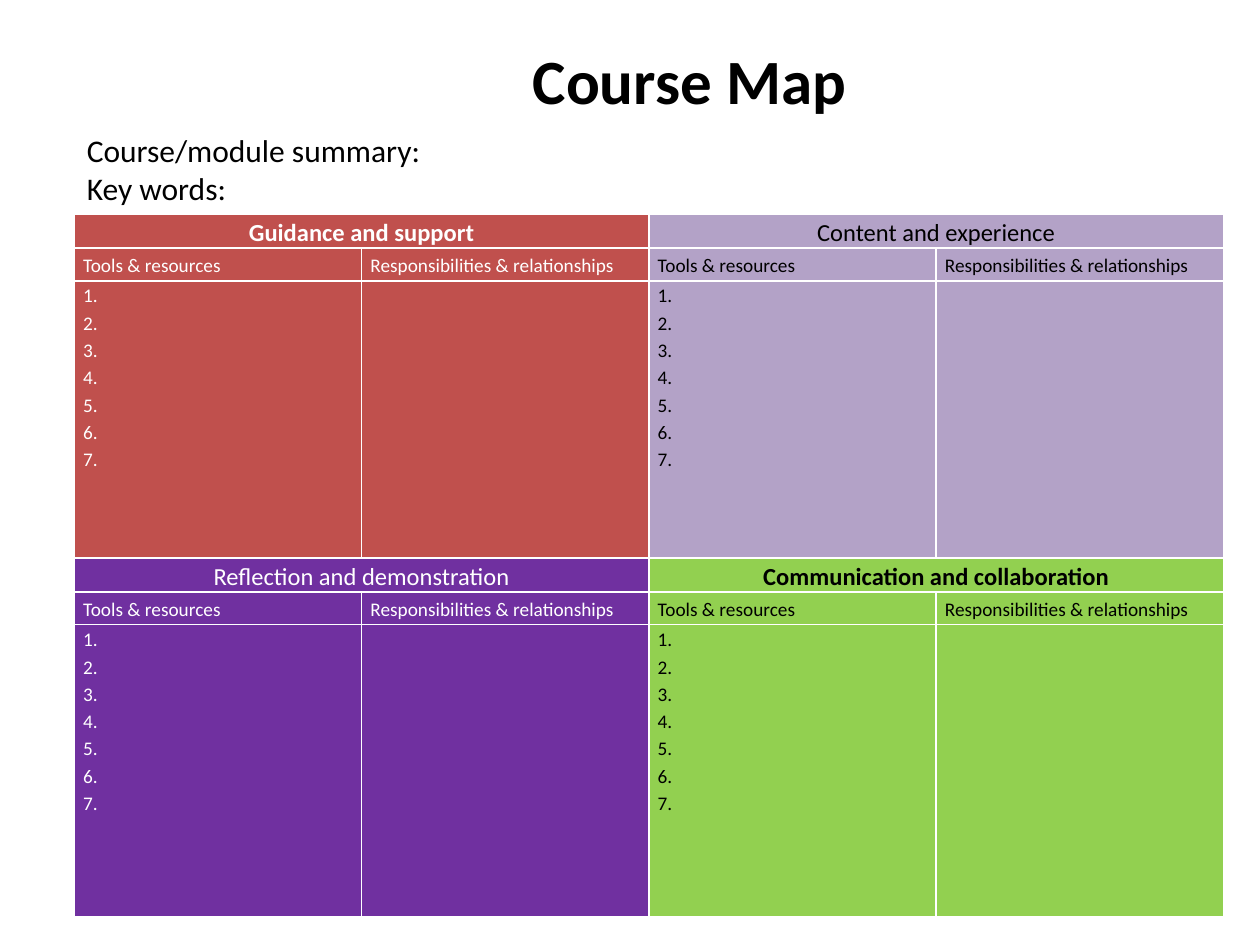
from lxml.etree import SubElement
from pptx import Presentation
from pptx.dml.color import RGBColor
from pptx.enum.text import MSO_ANCHOR, PP_ALIGN
from pptx.oxml.ns import qn
from pptx.util import Inches, Pt

BLACK = RGBColor(0x00, 0x00, 0x00)
WHITE = RGBColor(0xFF, 0xFF, 0xFF)
RED = RGBColor(0xC0, 0x50, 0x4D)
LILAC = RGBColor(0xB3, 0xA2, 0xC7)
PURPLE = RGBColor(0x70, 0x30, 0xA0)
GREEN = RGBColor(0x92, 0xD0, 0x50)

FONT = "Calibri"
LEFT, TOP, COLUMN_WIDTH = 0.59, 1.7, 2.28
ROW_HEIGHTS = [0.27, 0.26, 2.2, 0.26, 0.26, 2.32]
COLUMNS = 4
ROWS_PER_AREA, COLUMNS_PER_AREA = 3, 2
HEADINGS = ["Tools & resources", "Responsibilities & relationships"]
NUMBERS = [f"{number}." for number in range(1, 8)]
AREAS = [
    ("Guidance and support", RED, WHITE, True),
    ("Content and experience", LILAC, BLACK, False),
    ("Reflection and demonstration", PURPLE, WHITE, False),
    ("Communication and collaboration", GREEN, BLACK, True),
]


def write_lines(frame, lines, size, color=BLACK, bold=False, align=PP_ALIGN.LEFT, spacing=None):
    """Write each line as a paragraph of the text frame."""
    for index, line in enumerate(lines):
        para = frame.paragraphs[0] if index == 0 else frame.add_paragraph()
        para.alignment = align
        para.line_spacing = spacing
        span = para.add_run()
        span.text = line
        span.font.name = FONT
        span.font.size = Pt(size)
        span.font.bold = bold
        span.font.color.rgb = color


def add_text(page, lines, left, top, width, height, **style):
    """Add a wrapping text box."""
    box = page.shapes.add_textbox(Inches(left), Inches(top), Inches(width), Inches(height))
    box.text_frame.word_wrap = True
    write_lines(box.text_frame, lines, **style)


def style_cell(cell, fill):
    """Give a cell white borders, a plain fill and tight margins."""
    properties = cell._tc.get_or_add_tcPr()
    for side in ("lnL", "lnR", "lnT", "lnB"):
        border = SubElement(properties, qn(f"a:{side}"), w=str(Pt(1)))
        SubElement(SubElement(border, qn("a:solidFill")), qn("a:srgbClr"), val=str(WHITE))
    cell.fill.solid()
    cell.fill.fore_color.rgb = fill
    cell.margin_left = cell.margin_right = Inches(0.07)
    cell.margin_top = cell.margin_bottom = 0


def write_cell(cell, lines, anchor=MSO_ANCHOR.MIDDLE, **style):
    """Write anchored lines into a table cell."""
    cell.vertical_anchor = anchor
    write_lines(cell.text_frame, lines, spacing=1.15, **style)


def fill_area(table, row, column, title, fill, color, bold):
    """Fill one area: a merged title, two headings and a numbered list."""
    for row_step in range(ROWS_PER_AREA):
        for column_step in range(COLUMNS_PER_AREA):
            style_cell(table.cell(row + row_step, column + column_step), fill)
    title_cell = table.cell(row, column)
    title_cell.merge(table.cell(row, column + COLUMNS_PER_AREA - 1))
    write_cell(title_cell, [title], size=14, color=color, bold=bold, align=PP_ALIGN.CENTER)
    for step, heading in enumerate(HEADINGS):
        write_cell(table.cell(row + 1, column + step), [heading], size=11, color=color)
    write_cell(table.cell(row + 2, column), NUMBERS, anchor=MSO_ANCHOR.TOP, size=11, color=color)


def add_course_table(page):
    """Add the table with its four areas in a two by two grid."""
    frame = page.shapes.add_table(
        len(ROW_HEIGHTS), COLUMNS, Inches(LEFT), Inches(TOP),
        Inches(COLUMNS * COLUMN_WIDTH), Inches(sum(ROW_HEIGHTS)),
    )
    table = frame.table
    table.first_row = table.horz_banding = False
    for column in table.columns:
        column.width = Inches(COLUMN_WIDTH)
    for row, height in zip(table.rows, ROW_HEIGHTS):
        row.height = Inches(height)
    for index, area in enumerate(AREAS):
        grid_row, grid_column = divmod(index, 2)
        fill_area(table, grid_row * ROWS_PER_AREA, grid_column * COLUMNS_PER_AREA, *area)


def main():
    """Build the course map slide."""
    deck = Presentation()
    deck.slide_width, deck.slide_height = Inches(10), Inches(7.5)
    page = deck.slides.add_slide(deck.slide_layouts[6])
    add_text(page, ["Course Map"], 4.13, 0.28, 2.91, 0.84, size=36, bold=True)
    add_course_table(page)
    add_text(page, ["Course/module summary:", "Key words:"], LEFT, 0.99, 3.78, 0.71, size=18)
    deck.save("out.pptx")


if __name__ == "__main__":
    main()
